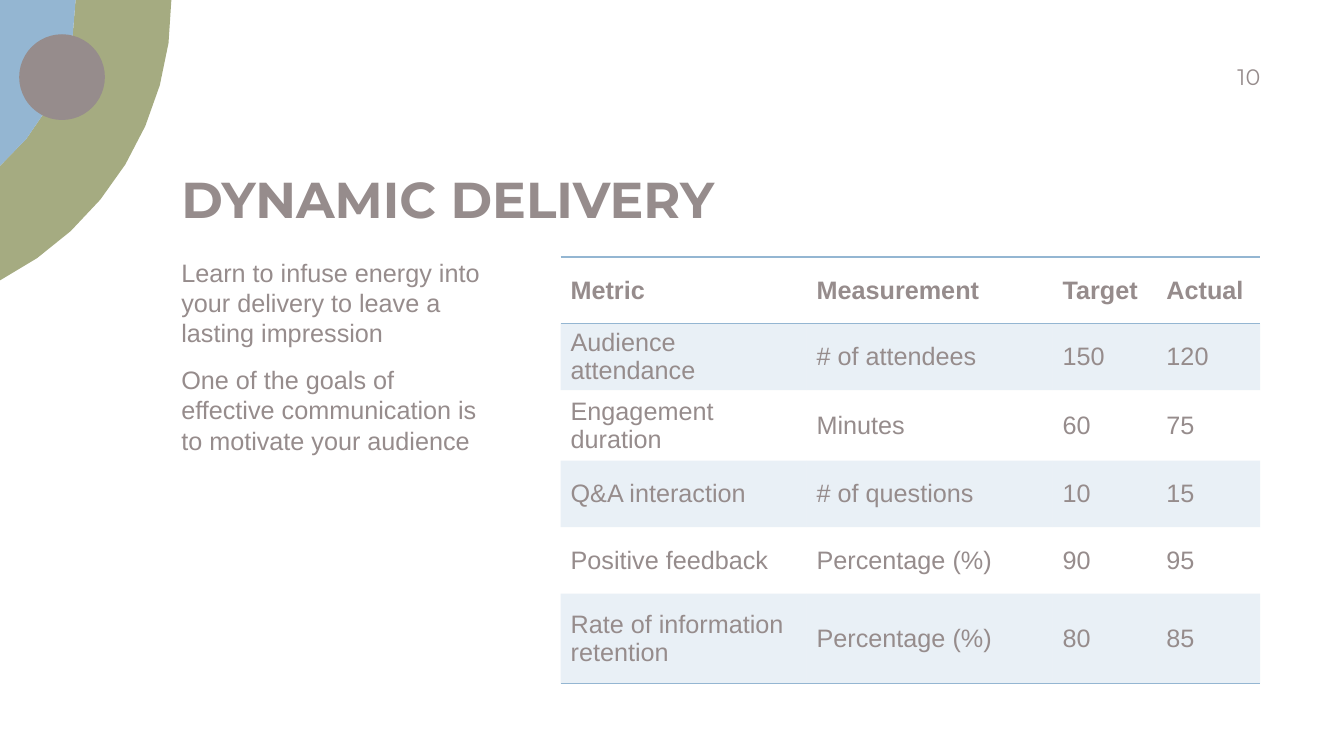
from math import acos, asin, cos, sin

from lxml.etree import SubElement
from pptx import Presentation
from pptx.dml.color import RGBColor
from pptx.enum.shapes import MSO_SHAPE as SHAPE
from pptx.enum.text import MSO_ANCHOR as ANCHOR, MSO_AUTO_SIZE as AUTO, PP_ALIGN as ALIGN
from pptx.oxml.ns import qn
from pptx.util import Pt

PX = 9144
BLUE, GREEN, TAUPE = "94B6D2", "A5AB81", "968C8C"
ARC_CENTER = (-141, 1)
OUTER_RADIUS, INNER_RADIUS = 311, 216
COLUMNS = [244, 244, 103, 103]
ROW_HEIGHTS = [66, 66, 70, 66, 66, 89]
METRICS = [
    ("Metric", "Measurement", "Target", "Actual"),
    ("Audience attendance", "# of attendees", "150", "120"),
    ("Engagement duration", "Minutes", "60", "75"),
    ("Q&A interaction", "# of questions", "10", "15"),
    ("Positive feedback", "Percentage (%)", "90", "95"),
    ("Rate of information retention", "Percentage (%)", "80", "85"),
]


def px(*values):
    """Turn pixel lengths into EMU."""
    return [round(v * PX) for v in values]


def color(hex_string):
    """Turn a hex string into a colour."""
    return RGBColor.from_string(hex_string)


def write(tf, text, size=18, font="Arial", bold=False, fill=TAUPE, align=ALIGN.LEFT,
          anchor=ANCHOR.TOP, after=0, spacing=None, margins=None):
    """Fill a text frame, one paragraph per line of text."""
    tf.word_wrap = True
    tf.vertical_anchor = anchor
    if margins:
        tf.margin_left, tf.margin_top, tf.margin_right, tf.margin_bottom = px(*margins)
    for i, line in enumerate(text.split("\n")):
        p = tf.add_paragraph() if i else tf.paragraphs[0]
        p.alignment, p.space_after, p.line_spacing = align, Pt(after), spacing
        r = p.add_run()
        r.text = line
        r.font.size, r.font.name, r.font.bold = Pt(size), font, bold
        r.font.color.rgb = color(fill)


def arc(radius, steps):
    """List the arc's points from the top slide edge to the left one."""
    cx, cy = ARC_CENTER
    start, end = asin(-cy / radius), acos(-cx / radius)
    angles = [start + (end - start) * i / steps for i in range(steps + 1)]
    return [(cx + radius * cos(a), cy + radius * sin(a)) for a in angles]


def border(cell, side, visible):
    """Draw or clear one side of a table cell."""
    ln = SubElement(cell._tc.get_or_add_tcPr(), qn(f"a:ln{side}"), w=str(Pt(1)))
    if visible:
        SubElement(SubElement(ln, qn("a:solidFill")), qn("a:srgbClr"), val=BLUE)
    else:
        SubElement(ln, qn("a:noFill"))


def tint(cell, hex_string, percent):
    """Fill a table cell with a see-through colour."""
    cell.fill.solid()
    cell.fill.fore_color.rgb = color(hex_string)
    clr = cell._tc.tcPr.find(qn("a:solidFill")).find(qn("a:srgbClr"))
    SubElement(clr, qn("a:alpha"), val=str(percent * 1000))


class Deck:
    """Holds the presentation, its style and the current slide."""

    def __init__(self, width, height):
        """Start a presentation with one title-only slide."""
        self.prs = Presentation()
        self.prs.slide_width, self.prs.slide_height = px(width, height)
        self.s = self.prs.slides.add_slide(self.prs.slide_layouts[5])

    def paint(self, sp, fill):
        """Give a shape a flat fill."""
        sp.shadow.inherit = False
        sp.fill.solid()
        sp.fill.fore_color.rgb = color(fill)
        sp.line.fill.background()

    def outline(self, points, fill):
        """Add a closed freeform."""
        first, *rest = [px(*point) for point in points]
        builder = self.s.shapes.build_freeform(*first)
        builder.add_line_segments(rest, close=True)
        self.paint(builder.convert_to_shape(), fill)

    def circle(self, x, y, size, fill):
        """Add a filled circle."""
        self.paint(self.s.shapes.add_shape(SHAPE.OVAL, *px(x, y, size, size)), fill)

    def title(self, box, text, **style):
        """Place and write the title."""
        sp = self.s.shapes.title
        sp.left, sp.top, sp.width, sp.height = px(*box)
        sp.text_frame.auto_size = AUTO.NONE
        write(sp.text_frame, text, **style)

    def text(self, box, text, **style):
        """Add a text box."""
        write(self.s.shapes.add_textbox(*px(*box)).text_frame, text, **style)

    def table(self, x, y, columns, heights, rows):
        """Add a table with ruled header and tinted alternate rows."""
        size = px(x, y, sum(columns), sum(heights))
        table = self.s.shapes.add_table(len(rows), len(columns), *size).table
        table.horz_banding = False
        for column, width in zip(table.columns, px(*columns)):
            column.width = width
        for row, height in zip(table.rows, px(*heights)):
            row.height = height
        ruled = (0, 1, len(rows))
        for i, row in enumerate(rows):
            for j, value in enumerate(row):
                cell = table.cell(i, j)
                write(cell.text_frame, value, bold=i == 0)
                cell.vertical_anchor = ANCHOR.MIDDLE
                cell.margin_top, cell.margin_bottom = px(3, 3)
                for side, visible in (("L", False), ("R", False),
                                      ("T", i in ruled), ("B", i + 1 in ruled)):
                    border(cell, side, visible)
                if i % 2:
                    tint(cell, BLUE, 20)
                else:
                    cell.fill.background()


def main():
    """Build the slide and save it."""
    deck = Deck(1333, 750)
    outer, inner = arc(OUTER_RADIUS, 8), arc(INNER_RADIUS, 5)
    deck.outline(outer + inner[::-1], GREEN)
    deck.outline(inner + [(0, 0)], BLUE)
    deck.circle(19, 34, 85, TAUPE)
    deck.title((170, 119, 1080, 108), "DYNAMIC DELIVERY", size=36, font="Montserrat",
               bold=True, anchor=ANCHOR.BOTTOM, margins=(10, 0, 10, 0))
    deck.text((170, 255, 325, 405),
              "Learn to infuse energy into your delivery to leave a lasting impression\n"
              "One of the goals of effective communication is to motivate your audience",
              after=12, spacing=Pt(21.6), margins=(10, 0, 10, 0))
    deck.table(556, 255, COLUMNS, ROW_HEIGHTS, METRICS)
    deck.text((1133, 50, 117, 52), "10", size=16, font="Montserrat", align=ALIGN.RIGHT,
              anchor=ANCHOR.MIDDLE, margins=(10, 5, 0, 5))
    deck.prs.save("out.pptx")


if __name__ == "__main__":
    main()
